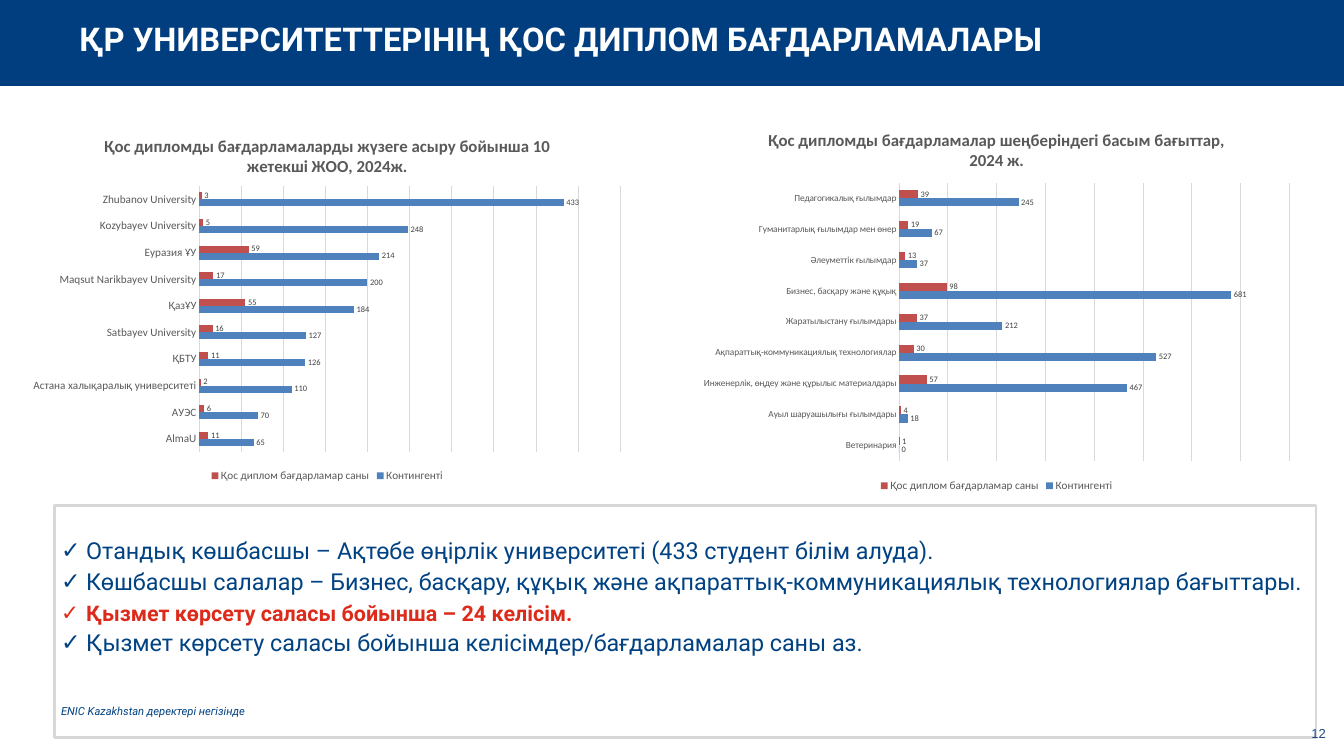
from lxml import etree
from pptx import Presentation
from pptx import util as u
from pptx.chart.data import CategoryChartData
from pptx.dml.color import RGBColor
from pptx.enum import chart as charts, shapes, text
from pptx.oxml import parse_xml
from pptx.oxml.ns import nsdecls, qn

COLORS = {
    "navy": "003E7F", "body": "014282", "red": "DD2B1B", "white": "FFFFFF",
    "frame": "D8D8D8", "grid": "D9D9D9", "axis": "595959", "label": "404040",
    "students": "4F81BD", "programs": "C0504D", "number": "1F497D",
}

# Content
TITLE = "ҚР УНИВЕРСИТЕТТЕРІНІҢ ҚОС ДИПЛОМ БАҒДАРЛАМАЛАРЫ"
SERIES = [("Контингенті", "students"), ("Қос диплом бағдарламар саны", "programs")]
# Rows are listed from the bottom bar up: category, students, programs
CHARTS = [
    {
        "title": "Қос дипломды бағдарламаларды жүзеге асыру бойынша 10 жетекші ЖОО, 2024ж.",
        "box": (0.84, 4.55, 23.06, 13.79),
        "plot": (0.29, 0.18, 0.69, 0.73),
        "category_size": 12, "maximum": 500, "step": 50,
        "rows": [
            ("AlmaU", 65, 11), ("АУЭС", 70, 6),
            ("Астана халықаралық университеті", 110, 2), ("ҚБТУ", 126, 11),
            ("Satbayev University", 127, 16), ("ҚазҰУ", 184, 55),
            ("Maqsut Narikbayev University", 200, 17), ("Еуразия ҰУ", 214, 59),
            ("Kozybayev University", 248, 5), ("Zhubanov University", 433, 3),
        ],
    },
    {
        "title": "Қос дипломды бағдарламалар шеңберіндегі басым бағыттар, 2024 ж.",
        "box": (26.14, 4.32, 23.06, 14.4),
        "plot": (0.34, 0.18, 0.64, 0.73),
        "category_size": 10, "maximum": 800, "step": 100,
        "rows": [
            ("Ветеринария", 0, 1), ("Ауыл шаруашылығы ғылымдары", 18, 4),
            ("Инженерлік, өңдеу және құрылыс материалдары", 467, 57),
            ("Ақпараттық-коммуникациялық технологиялар", 527, 30),
            ("Жаратылыстану ғылымдары", 212, 37),
            ("Бизнес, басқару және құқық", 681, 98),
            ("Әлеуметтік ғылымдар", 37, 13),
            ("Гуманитарлық ғылымдар мен өнер", 67, 19),
            ("Педагогикалық ғылымдар", 245, 39),
        ],
    },
]
# Text, size, color, bold
FINDINGS = [
    ("Отандық көшбасшы – Ақтөбе өңірлік университеті (433 студент білім алуда).", 25, "body", False),
    ("Көшбасшы салалар – Бизнес, басқару, құқық және ақпараттық-коммуникациялық технологиялар бағыттары.",
     25, "body", False),
    ("Қызмет көрсету саласы бойынша – 24 келісім.", 23, "red", True),
    ("Қызмет көрсету саласы бойынша келісімдер/бағдарламалар саны аз.", 25, "body", False),
]
SOURCE = "ENIC Kazakhstan деректері негізінде"
PAGE_NUMBER = "12"


def rgb(name):
    return RGBColor.from_string(COLORS[name])


def set_font(font, name, size, color, bold=False, italic=False):
    font.name, font.size = name, u.Pt(size)
    font.bold, font.italic = bold, italic
    font.color.rgb = rgb(color)


def cm(*lengths):
    return [u.Cm(length) for length in lengths]


def add_rectangle(slide, box, fill):
    shape = slide.shapes.add_shape(shapes.MSO_SHAPE.RECTANGLE, *cm(*box))
    shape.shadow.inherit = False
    shape.fill.solid()
    shape.fill.fore_color.rgb = rgb(fill)
    shape.line.fill.background()
    return shape


def add_check_bullet(paragraph):
    properties = paragraph._p.get_or_add_pPr()
    properties.set("marL", str(u.Cm(0.95)))
    properties.set("indent", str(-u.Cm(0.95)))
    etree.SubElement(properties, qn("a:buFont"), typeface="Arial")
    etree.SubElement(properties, qn("a:buChar"), char="✓")


def set_plot_layout(chart, plot):
    values = "".join(f'<c:{key} val="{value}"/>' for key, value in zip("xywh", plot))
    layout = parse_xml(
        f'<c:layout {nsdecls("c")}><c:manualLayout><c:layoutTarget val="inner"/>'
        f'<c:xMode val="edge"/><c:yMode val="edge"/>{values}</c:manualLayout></c:layout>')
    area = chart._chartSpace.chart.plotArea
    for old in area.findall(qn("c:layout")):
        area.remove(old)
    area.insert(0, layout)


def add_bar_chart(slide, content):
    categories, *columns = zip(*content["rows"])
    data = CategoryChartData(number_format="0")
    data.categories = categories
    for (name, _), values in zip(SERIES, columns):
        data.add_series(name, values)
    chart = slide.shapes.add_chart(
        charts.XL_CHART_TYPE.BAR_CLUSTERED, *cm(*content["box"]), data).chart
    set_font(chart.font, "Calibri", 10, "axis")

    chart.has_title = True
    paragraph = chart.chart_title.text_frame.paragraphs[0]
    paragraph.text = content["title"]
    set_font(paragraph.font, "Calibri", 18, "axis", bold=True)
    chart.chart_title.include_in_layout = False

    chart.has_legend = True
    chart.legend.position = charts.XL_LEGEND_POSITION.BOTTOM
    chart.legend.include_in_layout = False
    set_font(chart.legend.font, "Calibri", 12, "axis")

    category_axis, value_axis = chart.category_axis, chart.value_axis
    category_axis.major_tick_mark = charts.XL_TICK_MARK.NONE
    set_font(category_axis.tick_labels.font, "Calibri", content["category_size"], "axis")
    value_axis.visible = False
    value_axis.minimum_scale = 0
    value_axis.maximum_scale = content["maximum"]
    value_axis.major_unit = content["step"]
    value_axis.has_major_gridlines = True
    for line in (category_axis.format.line, value_axis.major_gridlines.format.line):
        line.color.rgb = rgb("grid")
        line.width = u.Pt(0.75)

    plot = chart.plots[0]
    plot.gap_width = 182
    plot.vary_by_categories = False
    for series, (_, color) in zip(plot.series, SERIES):
        series.format.fill.solid()
        series.format.fill.fore_color.rgb = rgb(color)
        labels = series.data_labels
        labels.show_value = True
        labels.position = charts.XL_LABEL_POSITION.OUTSIDE_END
        set_font(labels.font, "Calibri", 9, "label")
    set_plot_layout(chart, content["plot"])


presentation = Presentation()
presentation.slide_width, presentation.slide_height = u.Cm(50.8), u.Cm(28.58)
slide = presentation.slides.add_slide(presentation.slide_layouts[6])

# Banner and title
add_rectangle(slide, (0, 0, 50.8, 3.25), "navy")
frame = slide.shapes.add_textbox(*cm(3, 0.48, 38.5, 1.63)).text_frame
frame.word_wrap = True
frame.margin_left = frame.margin_right = frame.margin_top = frame.margin_bottom = 0
paragraph = frame.paragraphs[0]
paragraph.text = TITLE
paragraph.line_spacing = u.Pt(49)
set_font(paragraph.font, "Roboto", 35, "white", bold=True)

# Findings panel
panel = add_rectangle(slide, (2.06, 19.1, 47.68, 8.79), "white")
panel.line.color.rgb = rgb("frame")
panel.line.width = u.Pt(3)
frame = panel.text_frame
frame.word_wrap = True
frame.vertical_anchor = text.MSO_ANCHOR.TOP
frame.margin_top = u.Cm(1.29)
for index, (words, size, color, bold) in enumerate(FINDINGS + [(SOURCE, 12, "body", False)]):
    paragraph = frame.add_paragraph() if index else frame.paragraphs[0]
    paragraph.text = words
    paragraph.alignment = text.PP_ALIGN.LEFT
    paragraph.line_spacing = u.Pt(26.9)
    paragraph.space_after = u.Pt(6)
    is_source = index == len(FINDINGS)
    if is_source:
        paragraph.space_before = u.Pt(32.9)
    else:
        add_check_bullet(paragraph)
    set_font(paragraph.font, "Roboto", size, color, bold, italic=is_source)

# Charts
for content in CHARTS:
    add_bar_chart(slide, content)

# Page number
frame = slide.shapes.add_textbox(*cm(48.41, 27.13, 1.96, 1.17)).text_frame
frame.word_wrap = True
frame.vertical_anchor = text.MSO_ANCHOR.MIDDLE
paragraph = frame.paragraphs[0]
paragraph.text = PAGE_NUMBER
paragraph.alignment = text.PP_ALIGN.RIGHT
set_font(paragraph.font, "Arial", 14, "number")

presentation.save("out.pptx")
